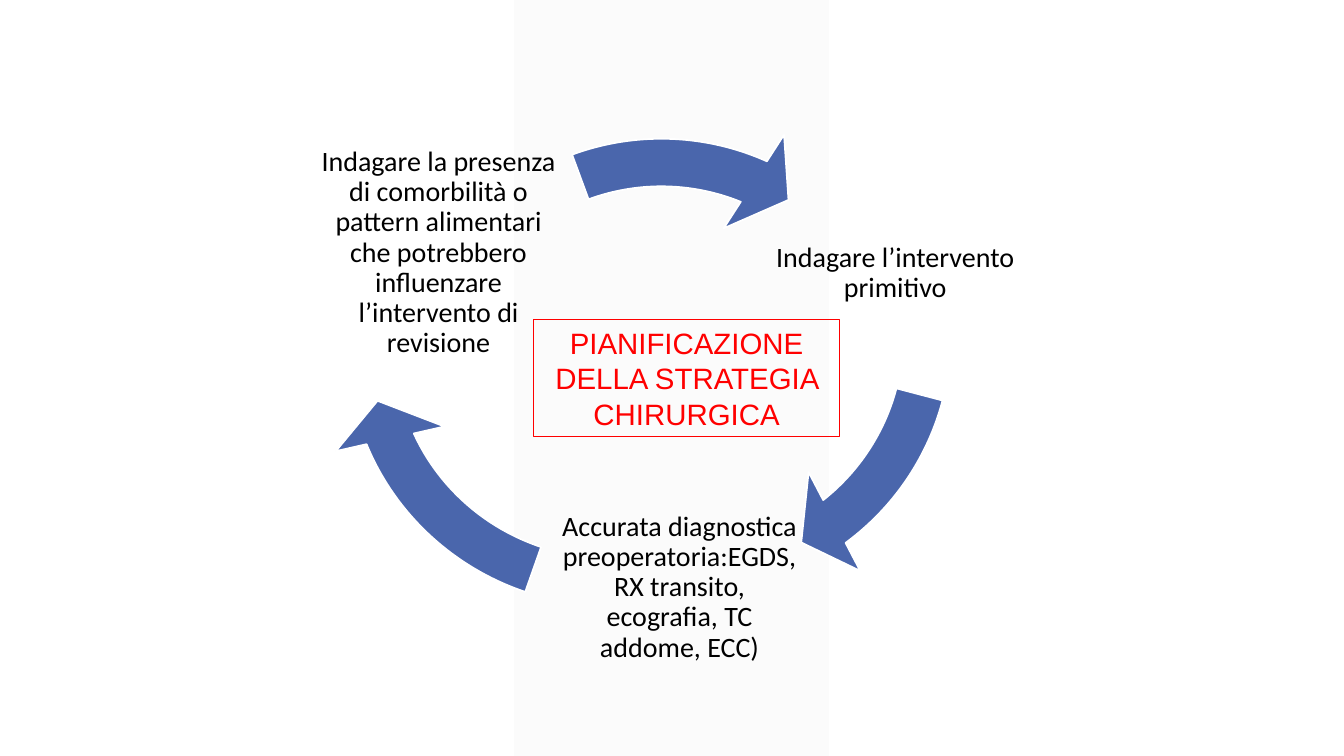
from dataclasses import dataclass

from lxml.etree import SubElement
from pptx import Presentation
from pptx.dml.color import RGBColor
from pptx.enum.shapes import MSO_SHAPE
from pptx.enum.text import MSO_ANCHOR, MSO_AUTO_SIZE, PP_ALIGN
from pptx.oxml.ns import qn
from pptx.util import Inches, Pt


@dataclass(frozen=True)
class Theme:
    band: RGBColor = RGBColor(0xF2, 0xF2, 0xF2)
    arrow: RGBColor = RGBColor(0x4A, 0x66, 0xAC)
    arrow_outline: RGBColor = RGBColor(0xFF, 0xFF, 0xFF)
    body: RGBColor = RGBColor(0, 0, 0)
    accent: RGBColor = RGBColor(0xFF, 0, 0)
    body_font: str = "Calibri"
    title_font: str = "Arial"
    body_size: int = 20
    title_size: int = 21
    band_opacity: int = 30


THEME = Theme()

LABEL_SIZE = 2.44
# Raw angles are 60000ths of a degree; python-pptx divides them by 100000.
ANGLE_UNIT = 60000 / 100000

# Label text, label offset, arrow box, arrow start and end in degrees;
# offsets are relative to the cycle's box.
STEPS = [
    ("Indagare l’intervento primitivo",
     (4.53, 1.05), (0.86, 0, 5.76, 5.76), 14.77, 52.82),
    ("Accurata diagnostica preoperatoria:EGDS, RX transito, ecografia, TC addome, ECC)",
     (2.39, 4.17), (0, 0.13, 5.87, 5.76), 109.44, 157.61),
    ("Indagare la presenza di comorbilità o pattern alimentari che potrebbero "
     "influenzare l’intervento di revisione",
     (0, 0.85), (0.55, 0.62, 5.76, 5.76), 249.8, 293.22),
]


def write_text(shape, text, *, font, size, color, line_spacing=None, inset=None):
    frame = shape.text_frame
    frame.word_wrap = True
    frame.vertical_anchor = MSO_ANCHOR.MIDDLE
    if inset is not None:
        frame.margin_left = frame.margin_right = Inches(inset)
        frame.margin_top = frame.margin_bottom = Inches(inset)
    paragraph = frame.paragraphs[0]
    paragraph.alignment = PP_ALIGN.CENTER
    if line_spacing:
        paragraph.line_spacing = line_spacing
    run = paragraph.add_run()
    run.text = text
    run.font.name = font
    run.font.size = Pt(size)
    run.font.color.rgb = color


def add_plain_shape(slide, kind, box, *, fill=None, line=None, line_width=1):
    shape = slide.shapes.add_shape(kind, *map(Inches, box))
    shape.shadow.inherit = False
    if fill is None:
        shape.fill.background()
    else:
        shape.fill.solid()
        shape.fill.fore_color.rgb = fill
    if line is None:
        shape.line.fill.background()
    else:
        shape.line.color.rgb = line
        shape.line.width = Pt(line_width)
    return shape


def add_background_band(slide, box):
    band = add_plain_shape(slide, MSO_SHAPE.PARALLELOGRAM, box, fill=THEME.band)
    band.adjustments[0] = 0
    color = band.fill._xPr.find(qn("a:solidFill"))[0]
    SubElement(color, qn("a:alpha"), val=str(THEME.band_opacity * 1000))


def add_cycle(slide, left, top):
    for text, (label_x, label_y), (x, y, width, height), start, end in STEPS:
        label = slide.shapes.add_textbox(
            *map(Inches, (left + label_x, top + label_y, LABEL_SIZE, LABEL_SIZE)))
        write_text(label, text, font=THEME.body_font, size=THEME.body_size,
                   color=THEME.body, line_spacing=0.9, inset=0.03)
        arrow = add_plain_shape(
            slide, MSO_SHAPE.CIRCULAR_ARROW, (left + x, top + y, width, height),
            fill=THEME.arrow, line=THEME.arrow_outline, line_width=1.25)
        values = (0.082, 9.6 * ANGLE_UNIT, end * ANGLE_UNIT, start * ANGLE_UNIT, 0.096)
        for index, value in enumerate(values):
            arrow.adjustments[index] = value


def add_center_title(slide, box):
    title = add_plain_shape(slide, MSO_SHAPE.RECTANGLE, box,
                            line=THEME.accent, line_width=0.75)
    write_text(title, "PIANIFICAZIONE DELLA STRATEGIA CHIRURGICA",
               font=THEME.title_font, size=THEME.title_size, color=THEME.accent)
    title.text_frame.auto_size = MSO_AUTO_SIZE.SHAPE_TO_FIT_TEXT


def main():
    presentation = Presentation()
    presentation.slide_width = Inches(13.33)
    presentation.slide_height = Inches(7.5)
    slide = presentation.slides.add_slide(presentation.slide_layouts[6])
    add_background_band(slide, (5.1, 0, 3.12, 7.5))
    add_cycle(slide, 3.13, 0.44)
    add_center_title(slide, (5.29, 3.17, 3.04, 1.16))
    presentation.save("out.pptx")


if __name__ == "__main__":
    main()
